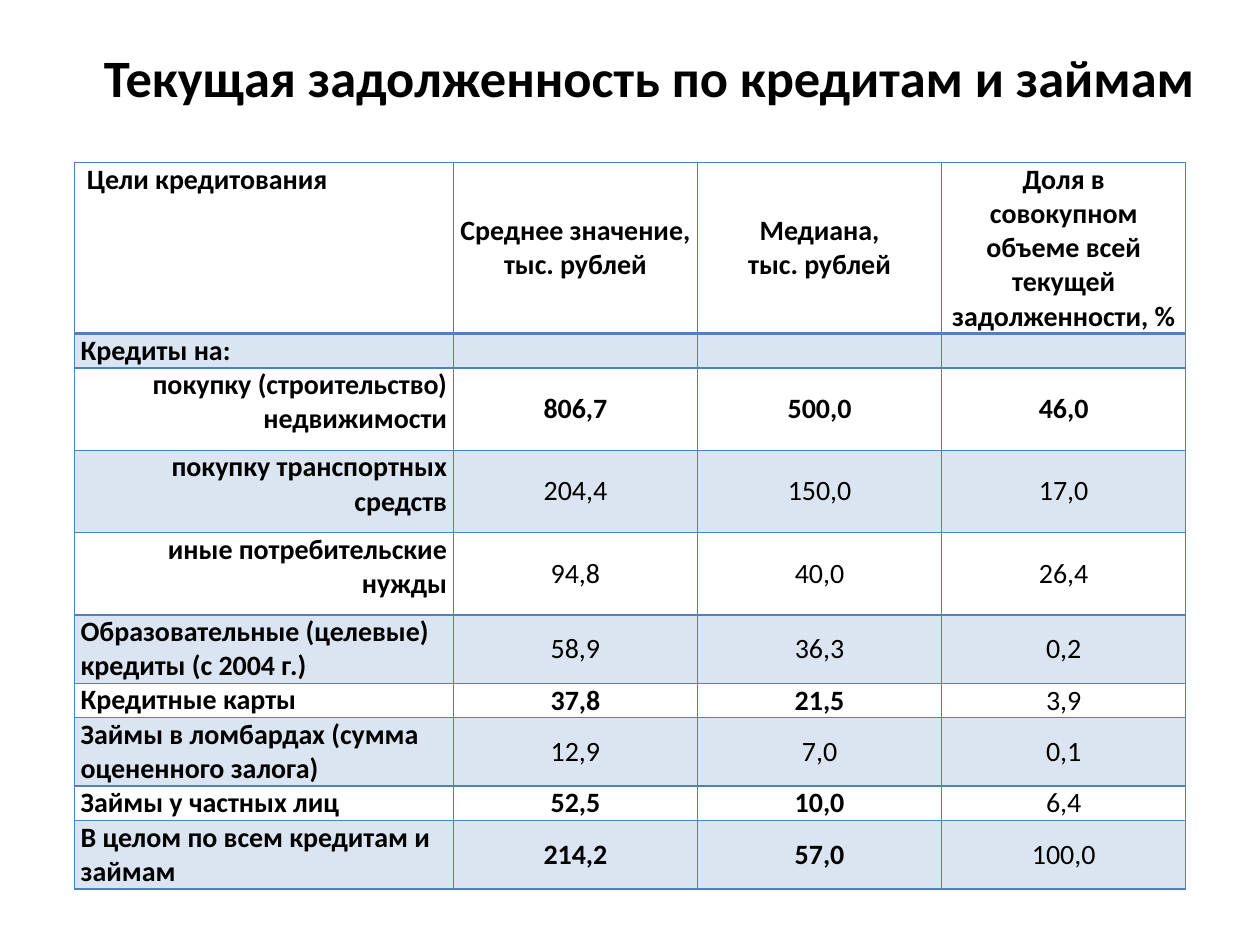
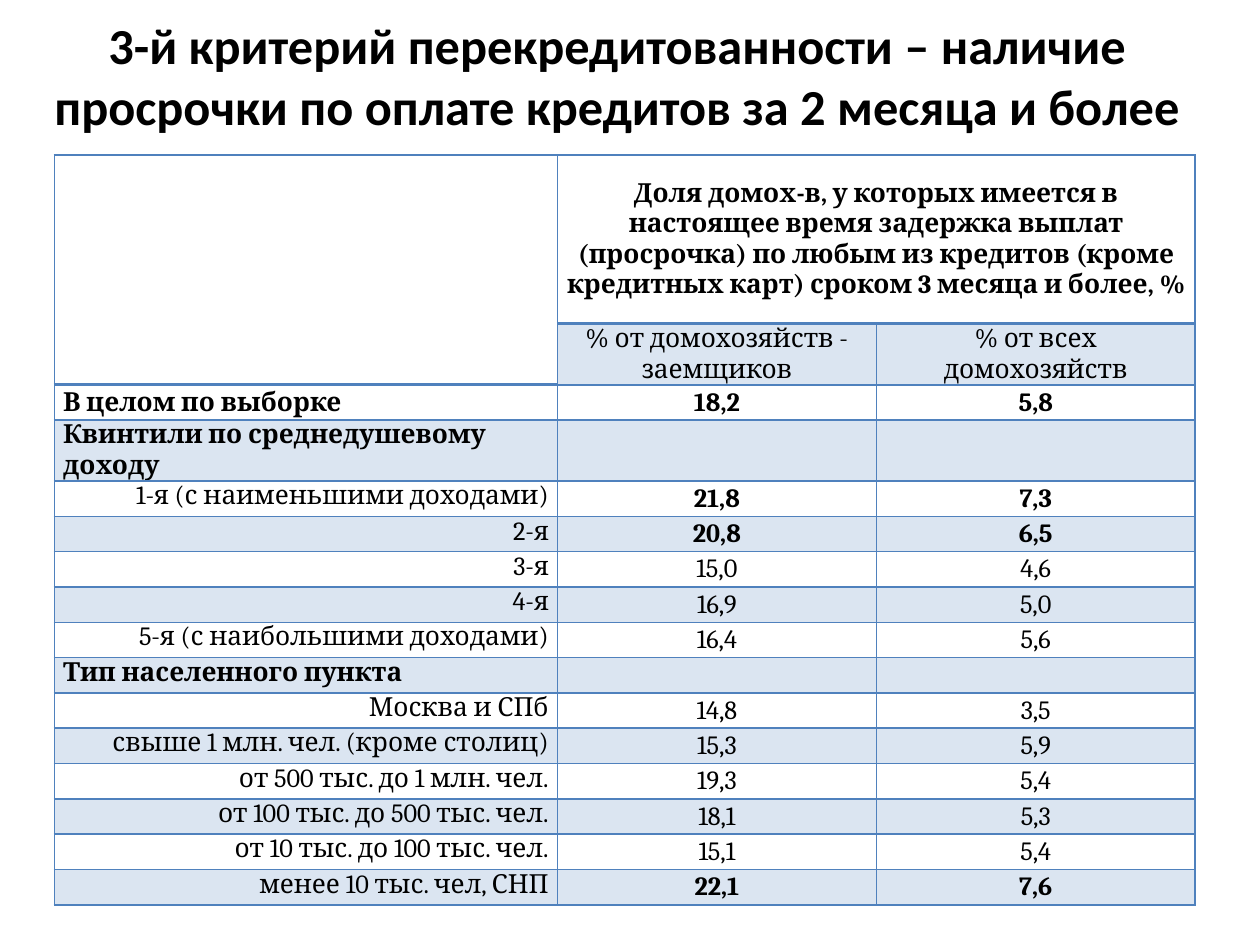
"""Build two slides with tables on household debt and overdue loans."""
from lxml import etree
from pptx import Presentation
from pptx.dml.color import RGBColor
from pptx.enum.text import MSO_ANCHOR, MSO_AUTO_SIZE, PP_ALIGN
from pptx.oxml.ns import qn
from pptx.util import Pt

TOP, MID = MSO_ANCHOR.TOP, MSO_ANCHOR.MIDDLE
LEFT, RIGHT, CENTER = PP_ALIGN.LEFT, PP_ALIGN.RIGHT, PP_ALIGN.CENTER
NO_FIT = MSO_AUTO_SIZE.NONE
BLACK, BLUE = "000000", "4F81BD"
TINT = 20000
THIN, THICK = 1, 2
TITLE_FONT = "Calibri"
# Row: label, label align, label anchor, values, count of bold values, height
DEBT = {
    "title": "Текущая задолженность по кредитам и займам",
    "title_box": (36.7, 20.9, 668.9, 45.4), "title_size": 30,
    "font": "Calibri", "size": 16, "pad": 3.6, "bold_subs": True,
    "left": 42.5, "top": 92.9, "cols": (216.6, 139.5, 139.5, 139.5),
    "merges": [],
    "rows": [
        (" Цели кредитования", LEFT, TOP,
         ["Среднее значение,\nтыс. рублей", "Медиана,\nтыс. рублей",
          "Доля в совокупном объеме всей текущей задолженности, %"], 3, 97.7),
        ("Кредиты на:", LEFT, TOP, ["", "", ""], 0, 19.5),
        ("покупку (строительство) недвижимости", RIGHT, TOP,
         ["806,7", "500,0", "46,0"], 3, 47),
        ("покупку транспортных средств", RIGHT, TOP,
         ["204,4", "150,0", "17,0"], 0, 47),
        ("иные потребительские нужды", RIGHT, TOP,
         ["94,8", "40,0", "26,4"], 0, 47),
        ("Образовательные (целевые) кредиты (с 2004 г.)", LEFT, TOP,
         ["58,9", "36,3", "0,2"], 0, 39),
        ("Кредитные карты", LEFT, TOP, ["37,8", "21,5", "3,9"], 2, 19.5),
        ("Займы в ломбардах (сумма оцененного залога)", LEFT, TOP,
         ["12,9", "7,0", "0,1"], 0, 39),
        ("Займы у частных лиц", LEFT, TOP, ["52,5", "10,0", "6,4"], 2, 19.5),
        ("В целом по всем кредитам и займам", LEFT, TOP,
         ["214,2", "57,0", "100,0"], 2, 39),
    ],
}
OVERDUE = {
    "title": "3-й критерий перекредитованности – наличие просрочки "
             "по оплате кредитов за 2 месяца и более",
    "title_box": (20.2, 15.1, 665.3, 55.4), "title_size": 28.8,
    "font": "Cambria", "size": 15, "pad": 5, "bold_subs": False,
    "left": 31, "top": 88.6, "cols": (287.6, 182.2, 182.2),
    "merges": [((0, 0), (1, 0)), ((0, 1), (0, 2))],
    "rows": [
        ("", LEFT, TOP,
         ["Доля домох-в, у которых имеется в настоящее время задержка выплат "
          "(просрочка) по любым из кредитов (кроме кредитных карт) сроком "
          "3 месяца и более, %", ""], 2, 96.5),
        ("", LEFT, TOP,
         ["% от домохозяйств - заемщиков", "% от всех домохозяйств"], 0, 34.8),
        ("В целом по выборке", LEFT, MID, ["18,2", "5,8"], 2, 20.2),
        ("Квинтили по среднедушевому доходу", LEFT, TOP, ["", ""], 0, 34.8),
        ("1-я (с наименьшими доходами)", RIGHT, TOP, ["21,8", "7,3"], 2, 20.2),
        ("2-я", RIGHT, TOP, ["20,8", "6,5"], 2, 20.2),
        ("3-я", RIGHT, TOP, ["15,0", "4,6"], 0, 20.2),
        ("4-я", RIGHT, TOP, ["16,9", "5,0"], 0, 20.2),
        ("5-я (с наибольшими доходами)", RIGHT, TOP, ["16,4", "5,6"], 0, 20.2),
        ("Тип населенного пункта", LEFT, TOP, ["", ""], 0, 20.2),
        ("Москва и СПб", RIGHT, TOP, ["14,8", "3,5"], 0, 20.2),
        ("свыше 1 млн. чел. (кроме столиц)", RIGHT, TOP,
         ["15,3", "5,9"], 0, 20.2),
        ("от 500 тыс. до 1 млн. чел.", RIGHT, TOP, ["19,3", "5,4"], 0, 20.2),
        ("от 100 тыс. до 500 тыс. чел.", RIGHT, TOP, ["18,1", "5,3"], 0, 20.2),
        ("от 10 тыс. до 100 тыс. чел.", RIGHT, TOP, ["15,1", "5,4"], 0, 20.2),
        ("менее 10 тыс. чел, СНП", RIGHT, TOP, ["22,1", "7,6"], 2, 20.2),
    ],
}


def paint(target, color):
    target.solid()
    target.fore_color.rgb = RGBColor.from_string(color)


def add_run(para, text, font, size, bold, align):
    para.alignment = align
    run = para.add_run()
    run.text = text
    run.font.name, run.font.size, run.font.bold = font, Pt(size), bold
    paint(run.font.fill, BLACK)


def add_title(slide, data):
    title = slide.shapes.title
    title.left, title.top, title.width, title.height = map(Pt, data["title_box"])
    frame = title.text_frame
    frame.auto_size, frame.vertical_anchor = NO_FIT, MID
    add_run(frame.paragraphs[0], data["title"], TITLE_FONT,
            data["title_size"], True, CENTER)


def tint(cell):
    paint(cell.fill, BLUE)
    color = cell._tc.tcPr.find(".//" + qn("a:srgbClr"))
    etree.SubElement(color, qn("a:alpha"), val=str(TINT))


def add_lines(cell, widths):
    props = cell._tc.get_or_add_tcPr()
    for spot, (side, width) in enumerate(zip("LRTB", widths)):
        line = etree.Element(qn("a:ln" + side), w=str(Pt(width)))
        fill = etree.SubElement(line, qn("a:solidFill"))
        etree.SubElement(fill, qn("a:srgbClr"), val=BLUE)
        props.insert(spot, line)


def fill_cell(cell, text, data, bold, align, anchor):
    cell.margin_left = cell.margin_right = Pt(data["pad"])
    cell.margin_top = cell.margin_bottom = 0
    cell.vertical_anchor = anchor
    frame = cell.text_frame
    if not text:
        etree.SubElement(frame.paragraphs[0]._p, qn("a:endParaRPr"),
                         sz=str(data["size"] * 100))
        return
    for num, part in enumerate(text.split("\n")):
        para = frame.add_paragraph() if num else frame.paragraphs[0]
        add_run(para, part, data["font"], data["size"], bold, align)


def add_grid(slide, data):
    rows, cols = data["rows"], data["cols"]
    high = sum(row[-1] for row in rows)
    grid = slide.shapes.add_table(
        len(rows), len(cols), Pt(data["left"]), Pt(data["top"]),
        Pt(sum(cols)), Pt(high)).table
    grid.first_row = grid.horz_banding = False
    for col, width in zip(grid.columns, cols):
        col.width = Pt(width)
    for start, end in data["merges"]:
        grid.cell(*start).merge(grid.cell(*end))
    for r, (label, align, anchor, values, strong, height) in enumerate(rows):
        grid.rows[r].height = Pt(height)
        for c, text in enumerate([label] + values):
            cell = grid.cell(r, c)
            if c:
                fill_cell(cell, text, data, c <= strong, CENTER, MID)
            else:
                bold = align != RIGHT or data["bold_subs"]
                fill_cell(cell, text, data, bold, align, anchor)
            if r % 2 and not cell.is_spanned:
                tint(cell)
            else:
                cell.fill.background()
            add_lines(cell, (THIN, THIN, THICK if r == 1 else THIN,
                             THICK if r == 0 else THIN))


def main():
    deck = Presentation()
    deck.slide_width, deck.slide_height = Pt(720), Pt(540)
    for data in (DEBT, OVERDUE):
        slide = deck.slides.add_slide(deck.slide_layouts[5])
        add_title(slide, data)
        add_grid(slide, data)
    deck.save("out.pptx")


if __name__ == "__main__":
    main()
